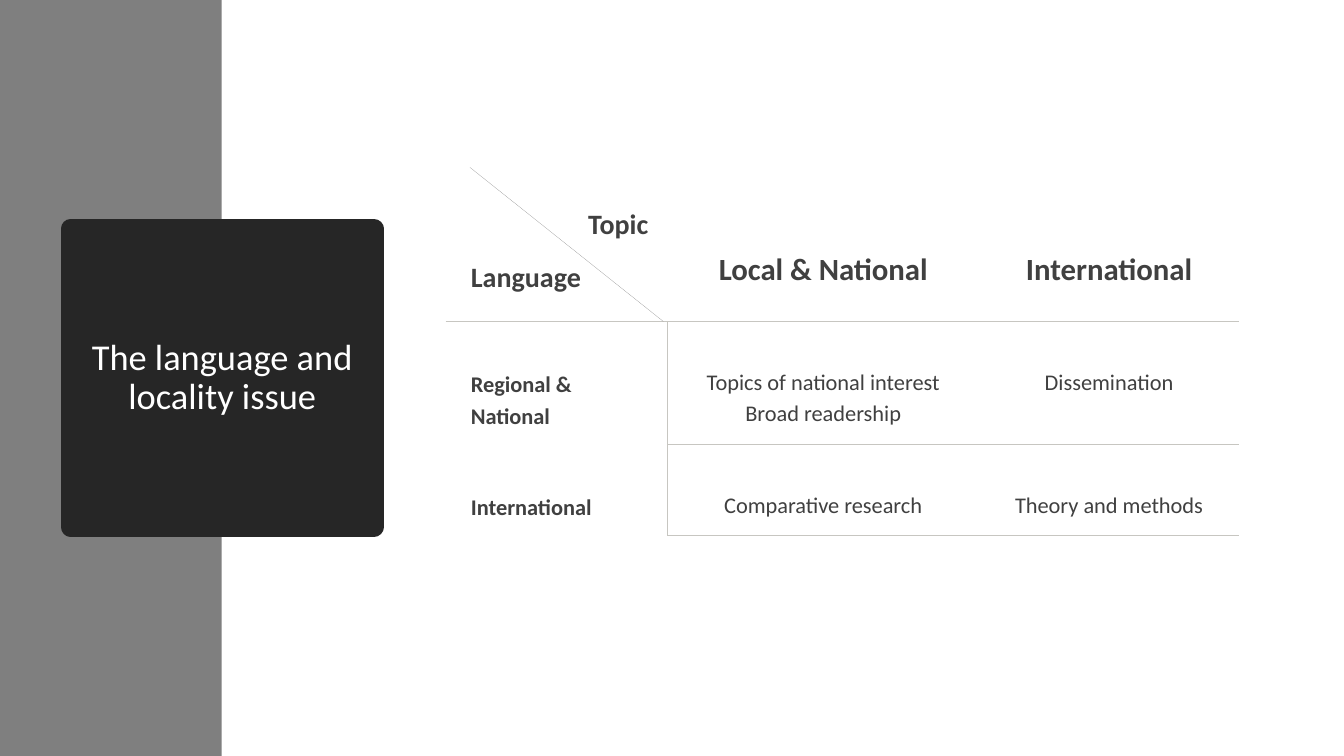
"""Build the slide on the language and locality issue."""
from lxml import etree
from pptx import Presentation
from pptx.dml.color import RGBColor
from pptx.enum.shapes import MSO_CONNECTOR, MSO_SHAPE
from pptx.enum.text import MSO_ANCHOR, PP_ALIGN
from pptx.oxml.ns import qn
from pptx.util import Inches, Pt

LEFT, CENTER, RIGHT = PP_ALIGN.LEFT, PP_ALIGN.CENTER, PP_ALIGN.RIGHT
TOP, MIDDLE = MSO_ANCHOR.TOP, MSO_ANCHOR.MIDDLE
RECTANGLE, STRAIGHT = MSO_SHAPE.RECTANGLE, MSO_CONNECTOR.STRAIGHT

WHITE = RGBColor(0xFF, 0xFF, 0xFF)
BAND_GRAY = RGBColor(0x7F, 0x7F, 0x7F)
TITLE_FILL = RGBColor(0x26, 0x26, 0x26)
TEXT_GRAY = RGBColor(0x40, 0x40, 0x40)
DIAGONAL_GRAY = RGBColor(0x80, 0x80, 0x80)
BORDER_GRAY = RGBColor(0xC7, 0xC6, 0xC1)
FONT = "Calibri"

TITLE = "The language and locality issue"
AXES = [("Topic", RIGHT), ("Language", LEFT)]
ROWS = [
    ["", "Local & National", "International"],
    ["Regional & National", "Topics of national interest\nBroad readership", "Dissemination"],
    ["International", "Comparative research", "Theory and methods"],
]
COLUMN_WIDTHS = [2.2, 3.03, 2.64]
ROW_HEIGHTS = [1.3, 1.22, 0.9]
TABLE_LEFT, TABLE_TOP = 4.42, 1.89
AXIS_SIZE, HEADER_SIZE, BODY_SIZE = 20, 22, 16
MARGIN = 0.12
HEADER_DROP, BODY_DROP = 0.43, 0.31


def add_text(para, text, size, color, bold=False):
    for index, line in enumerate(text.split("\n")):
        if index:
            para.add_line_break()
        span = para.add_run()
        span.text = line
        span.font.name = FONT
        span.font.size = Pt(size)
        span.font.bold = bold
        span.font.color.rgb = color


def add_block(page, left, top, width, height, fill):
    box = page.shapes.add_shape(RECTANGLE, Inches(left), Inches(top), Inches(width), Inches(height))
    box.shadow.inherit = False
    box.fill.solid()
    box.fill.fore_color.rgb = fill
    box.line.fill.background()
    return box


def set_borders(cell, visible):
    properties = cell._tc.get_or_add_tcPr()
    for index, side in enumerate(("lnL", "lnR", "lnT", "lnB")):
        border = etree.Element(qn(f"a:{side}"), w=str(Pt(0.75)))
        if side in visible:
            fill = etree.SubElement(border, qn("a:solidFill"))
            etree.SubElement(fill, qn("a:srgbClr"), val=str(BORDER_GRAY))
        else:
            etree.SubElement(border, qn("a:noFill"))
        properties.insert(index, border)


def visible_borders(row, column):
    sides = set()
    if row == 0 or column > 0:
        sides.add("lnB")
    if row == 1 or (row > 1 and column > 0):
        sides.add("lnT")
    if row > 0 and column < 2:
        sides.add("lnR" if column == 0 else "lnL")
    return sides


def fill_cell(cell, row, column):
    size, drop = (BODY_SIZE, BODY_DROP) if row else (HEADER_SIZE, HEADER_DROP)
    lines = [(ROWS[row][column], LEFT if column == 0 else CENTER)]
    if row == column == 0:
        size, drop, lines = AXIS_SIZE, 0, AXES
    cell.fill.background()
    set_borders(cell, visible_borders(row, column))
    cell.margin_left, cell.margin_right = Inches(0.25), Inches(0.19)
    cell.margin_top, cell.margin_bottom = Inches(MARGIN + drop), Inches(MARGIN)
    cell.vertical_anchor = MIDDLE if row and column == 0 else TOP
    frame = cell.text_frame
    for index, (text, alignment) in enumerate(lines):
        para = frame.add_paragraph() if index else frame.paragraphs[0]
        para.alignment = alignment
        para.line_spacing = 1.15
        para.space_after = Pt(10)
        add_text(para, text, size, TEXT_GRAY, row == 0 or column == 0)


def add_title(page):
    box = add_block(page, 0.7, 2.27, 3.01, 2.96, TITLE_FILL)
    box.line.color.rgb = TITLE_FILL
    box.line.width = Pt(13.75)
    etree.SubElement(box.line._get_or_add_ln(), qn("a:round"))
    frame = box.text_frame
    frame.word_wrap = True
    frame.vertical_anchor = MIDDLE
    para = frame.paragraphs[0]
    para.alignment = CENTER
    para.line_spacing = 0.9
    add_text(para, TITLE, 26, WHITE)


def add_matrix(page):
    table = page.shapes.add_table(
        len(ROWS), len(COLUMN_WIDTHS), Inches(TABLE_LEFT), Inches(TABLE_TOP),
        Inches(sum(COLUMN_WIDTHS)), Inches(sum(ROW_HEIGHTS))).table
    table.first_row = False
    table.horz_banding = False
    for column, width in zip(table.columns, COLUMN_WIDTHS):
        column.width = Inches(width)
    for row, height in enumerate(ROW_HEIGHTS):
        table.rows[row].height = Inches(height)
        for column in range(len(COLUMN_WIDTHS)):
            fill_cell(table.cell(row, column), row, column)


def add_diagonal(page):
    line = page.shapes.add_connector(STRAIGHT, Inches(4.66), Inches(1.66), Inches(6.58), Inches(3.19))
    line.line.color.rgb = DIAGONAL_GRAY
    line.line.width = Pt(0.1)
    etree.SubElement(line._element.spPr, qn("a:effectLst"))


def main():
    deck = Presentation()
    deck.slide_width, deck.slide_height = Inches(13.33), Inches(7.5)
    page = deck.slides.add_slide(deck.slide_layouts[6])
    add_block(page, 0, 0, 2.2, 7.5, BAND_GRAY)
    add_title(page)
    add_matrix(page)
    add_diagonal(page)
    deck.save("out.pptx")


if __name__ == "__main__":
    main()
